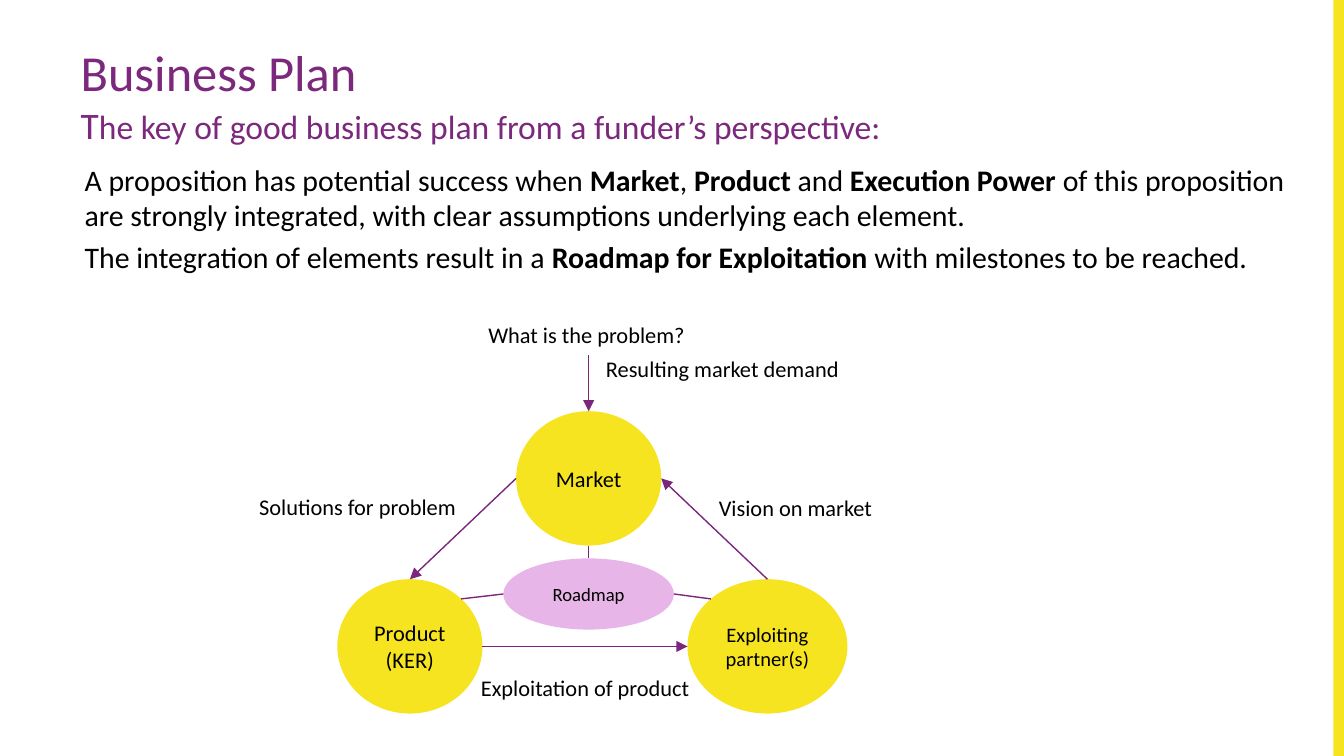
from math import cos, radians, sin

from lxml import etree
from pptx import Presentation
from pptx import util as u
from pptx.dml.color import RGBColor
from pptx.enum import shapes, text
from pptx.oxml.ns import qn

# Content
WIDTH = 10
HEIGHT = WIDTH * 9 / 16
FONT = "Calibri"
BLACK, YELLOW, PURPLE, LINE, PINK = "000000", "F6E421", "7C287D", "7B257C", "E8B5E9"

TITLE = "Business Plan"
SUBTITLE = [("T", 20), ("he key of good business plan from a funder’s perspective:", 18)]
BODY = [  # (text, bold)
    [("A proposition has potential success when ", False), ("Market", True),
     (", ", False), ("Product ", True), ("and ", False), ("Execution Power ", True),
     ("of this proposition are strongly integrated, with clear assumptions "
      "underlying each element.", False)],
    [("The integration of elements result in a ", False),
     ("Roadmap for Exploitation ", True), ("with milestones to be reached.", False)],
]

# Triangle of elements around the roadmap
AXIS, APEX, BASE, REACH = 4.38, 3.56, 4.81, 1.33
ELEMENTS = {  # name: (lines, centre x, centre y, width, height, size, fill)
    "market": (["Market"], AXIS, APEX, 1.08, 1, 12, YELLOW),
    "partner": (["Exploiting partner(s)"], AXIS + REACH, BASE, 1.19, 1, 11, YELLOW),
    "product": (["Product", "(KER)"], AXIS - REACH, BASE, 1.08, 1, 12, YELLOW),
    "roadmap": (["Roadmap"], AXIS, 4.42, 1.27, 0.53, 10, PINK),
}
LABELS = [  # (text, left, top, width, alignment)
    ("What is the problem?", 3.2, 2.34, 2.33, text.PP_ALIGN.CENTER),
    ("Resulting market demand", 4.41, 2.59, 2.01, text.PP_ALIGN.LEFT),
    ("Solutions for problem", 1.83, 3.62, 1.84, text.PP_ALIGN.LEFT),
    ("Exploitation of product", 3.48, 4.97, 1.84, text.PP_ALIGN.LEFT),
    ("Vision on market", 5.25, 3.63, 1.84, text.PP_ALIGN.LEFT),
]
RIGHT, TOP, LEFT, BOTTOM = 0, 90, 180, 270
LINKS = [  # (from element, angle, to element, angle, arrow)
    ("market", LEFT, "product", TOP, True),
    ("product", RIGHT, "partner", LEFT, True),
    ("partner", TOP, "market", RIGHT, True),
    ("product", 45, "roadmap", LEFT, False),
    ("roadmap", RIGHT, "partner", 135, False),
    ("market", BOTTOM, "roadmap", TOP, False),
]


def color(value):
    return RGBColor.from_string(value)


def style(font, size, fill=BLACK):
    font.name, font.size, font.color.rgb = FONT, u.Pt(size), color(fill)


def place(shape, *box):
    shape.left, shape.top, shape.width, shape.height = map(u.Inches, box)


def add_shape(kind, fill, *box):
    shape = page.shapes.add_shape(kind, *map(u.Inches, box))
    shape.shadow.inherit = False
    shape.fill.solid()
    shape.fill.fore_color.rgb = color(fill)
    shape.line.fill.background()
    return shape


def rim(name, angle):
    """Point on an element's edge, counter-clockwise from the right."""
    _, x, y, width, height, _, _ = ELEMENTS[name]
    turn = radians(angle)
    return x + width / 2 * cos(turn), y - height / 2 * sin(turn)


def add_link(start, end, arrow):
    link = page.shapes.add_connector(shapes.MSO_CONNECTOR.STRAIGHT,
                                     *map(u.Inches, start + end))
    link.line.color.rgb, link.line.width = color(LINE), u.Pt(0.75)
    if arrow:
        outline = link._element.spPr.find(qn("a:ln"))
        etree.SubElement(outline, qn("a:tailEnd"), type="triangle")
    etree.SubElement(link._element.spPr, qn("a:effectLst"))


deck = Presentation()
deck.slide_width, deck.slide_height = u.Inches(WIDTH), u.Inches(HEIGHT)
page = deck.slides.add_slide(deck.slide_layouts[1])
title, body = page.placeholders

# Edge band
add_shape(shapes.MSO_SHAPE.RECTANGLE, YELLOW, WIDTH - 0.08, 0, 0.08, HEIGHT)

# Title
place(title, 0.5, 0.23, 9.22, 0.94)
title.text_frame.vertical_anchor = text.MSO_ANCHOR.MIDDLE
para = title.text_frame.paragraphs[0]
para.alignment = text.PP_ALIGN.LEFT
span = para.add_run()
span.text = TITLE
style(span.font, 27, PURPLE)
para.add_line_break()
for words, size in SUBTITLE:
    span = para.add_run()
    span.text = words
    style(span.font, size, PURPLE)

# Body
place(body, 0.53, 1.15, 9.23, 1)
for index, spans in enumerate(BODY):
    para = body.text_frame.paragraphs[0] if index == 0 else body.text_frame.add_paragraph()
    props = para._p.get_or_add_pPr()
    props.set("marL", "0")
    props.set("indent", "0")
    etree.SubElement(props, qn("a:buNone"))
    para.space_before = u.Pt(3.2 if index else 0)
    style(para.font, 16)
    for words, bold in spans:
        span = para.add_run()
        span.text, span.font.bold = words, bold

# Elements
for lines, x, y, width, height, size, fill in ELEMENTS.values():
    oval = add_shape(shapes.MSO_SHAPE.OVAL, fill,
                     x - width / 2, y - height / 2, width, height)
    oval.text_frame.text = "\n".join(lines)
    oval.text_frame.vertical_anchor = text.MSO_ANCHOR.MIDDLE
    for para in oval.text_frame.paragraphs:
        para.alignment = text.PP_ALIGN.CENTER
        style(para.font, size)

# Labels
for words, left, top, width, alignment in LABELS:
    box = page.shapes.add_textbox(*map(u.Inches, (left, top, width, 0.3)))
    box.text_frame.word_wrap = True
    para = box.text_frame.paragraphs[0]
    para.text, para.alignment = words, alignment
    style(para.font, 12)

# Links
add_link((AXIS, 2.64), rim("market", TOP), True)
for source, leave, target, enter, arrow in LINKS:
    add_link(rim(source, leave), rim(target, enter), arrow)

deck.save("out.pptx")
